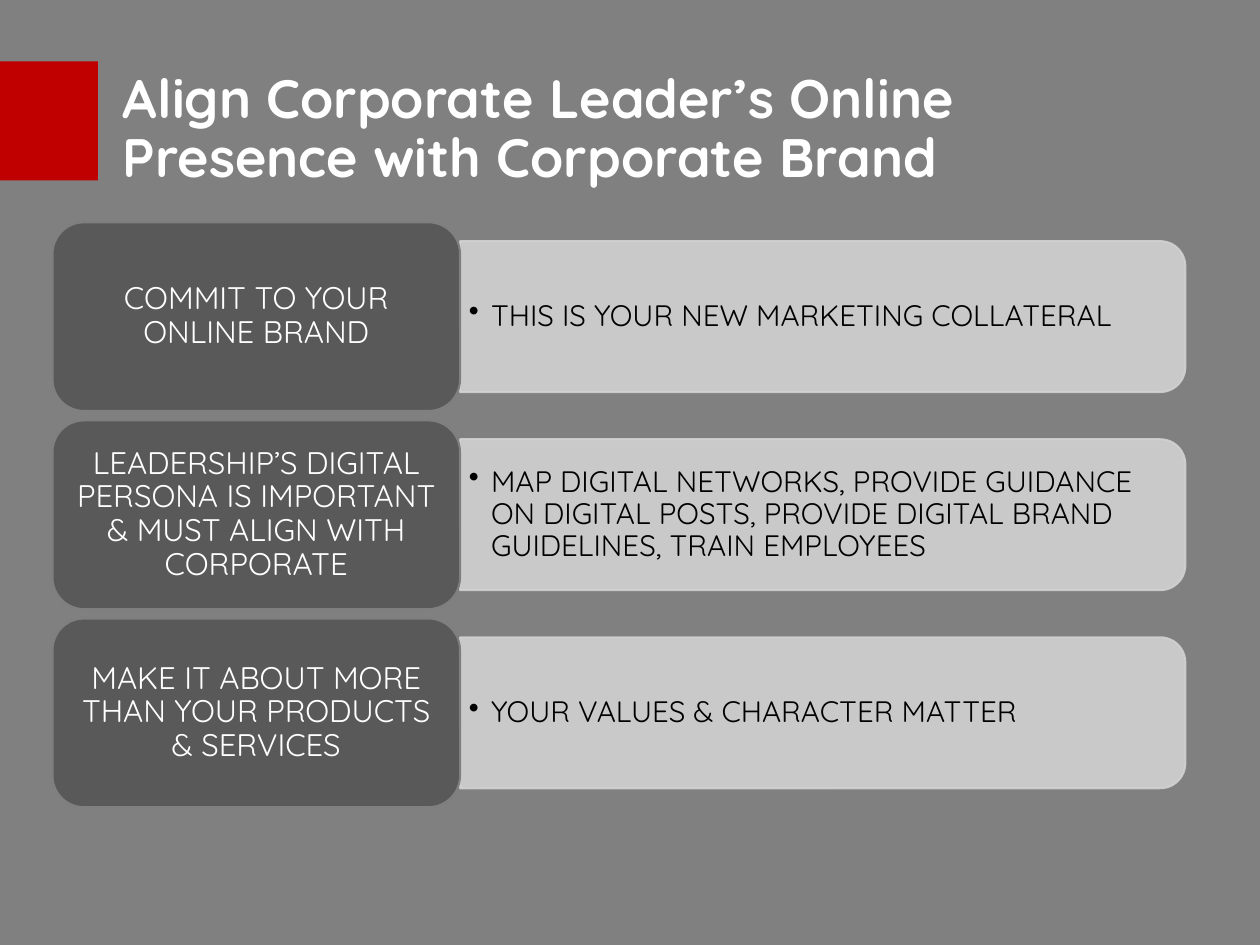
from lxml.etree import SubElement
from pptx import Presentation
from pptx.dml.color import RGBColor
from pptx.enum.shapes import MSO_SHAPE
from pptx.enum.text import MSO_ANCHOR, MSO_AUTO_SIZE, PP_ALIGN
from pptx.oxml.ns import qn
from pptx.util import Pt

COLORS = {
    "background": "808080",
    "accent": "C00000",
    "label": "595959",
    "label_line": "7F7F7F",
    "panel": "D1D1D1",
    "light_text": "FFFFFF",
    "dark_text": "000000",
}
FONT = "Quicksand"
TITLE = "Align Corporate Leader’s Online Presence with Corporate Brand"
ROWS = [
    ("COMMIT TO YOUR ONLINE BRAND",
     "THIS IS YOUR NEW MARKETING COLLATERAL"),
    ("LEADERSHIP’S DIGITAL PERSONA IS IMPORTANT & MUST ALIGN WITH CORPORATE",
     "MAP DIGITAL NETWORKS, PROVIDE GUIDANCE ON DIGITAL POSTS, "
     "PROVIDE DIGITAL BRAND GUIDELINES, TRAIN EMPLOYEES"),
    ("MAKE IT ABOUT MORE THAN YOUR PRODUCTS & SERVICES",
     "YOUR VALUES & CHARACTER MATTER"),
]


def color(name):
    return RGBColor.from_string(COLORS[name])


def add_block(page, kind, left, top, width, height, fill, line=None):
    block = page.shapes.add_shape(kind, Pt(left), Pt(top), Pt(width), Pt(height))
    block.shadow.inherit = False
    block.fill.solid()
    block.fill.fore_color.rgb = color(fill)
    if line:
        block.line.color.rgb = color(line)
        block.line.width = Pt(1.25)
    else:
        block.line.fill.background()
    return block


def write(box, text, size, ink, align, anchor, margins, bold=False):
    frame = box.text_frame
    frame.word_wrap = True
    frame.auto_size = MSO_AUTO_SIZE.NONE
    frame.vertical_anchor = anchor
    frame.margin_left = frame.margin_right = Pt(margins[0])
    frame.margin_top = frame.margin_bottom = Pt(margins[1])
    para = frame.paragraphs[0]
    para.alignment = align
    para.line_spacing = 0.9
    span = para.add_run()
    span.text = text
    span.font.name = FONT
    span.font.size = Pt(size)
    span.font.bold = bold
    span.font.color.rgb = color(ink)
    return para


def make_translucent(panel, percent):
    for node in panel.element.spPr.iter(qn("a:srgbClr")):
        SubElement(node, qn("a:alpha"), val=str(percent * 1000))


def add_bullet(para, indent):
    properties = para._p.get_or_add_pPr()
    properties.set("marL", str(Pt(indent)))
    properties.set("indent", str(-Pt(indent)))
    SubElement(properties, qn("a:buChar"), char="•")


def add_header(page, left, top, width, height):
    # Red tab at the slide edge
    add_block(page, MSO_SHAPE.RECTANGLE, 0, top, 59.6, 72.6, "accent")
    # Title
    title = page.shapes.title
    title.left, title.top = Pt(left), Pt(top)
    title.width, title.height = Pt(width), Pt(height)
    write(title, TITLE, 33, "light_text", PP_ALIGN.LEFT,
          MSO_ANCHOR.BOTTOM, (7.2, 3.6), bold=True)


def add_row(page, left, top, width, height, label_text, detail_text):
    label_width = 248.4
    panel_left = left + label_width
    panel_width = width - label_width
    panel_height = height * 0.8
    middle = top + height / 2

    # Detail panel: turned a quarter so its rounded corners face right
    panel = add_block(page, MSO_SHAPE.ROUND_2_SAME_RECTANGLE,
                      panel_left + (panel_width - panel_height) / 2,
                      middle - panel_width / 2,
                      panel_height, panel_width, "panel", "panel")
    panel.rotation = 90
    make_translucent(panel, 90)

    # Detail text
    text_height = panel_height - 9
    detail = page.shapes.add_textbox(Pt(panel_left), Pt(middle - text_height / 2),
                                     Pt(panel_width - 4.5), Pt(text_height))
    para = write(detail, detail_text, 18, "dark_text", PP_ALIGN.LEFT,
                 MSO_ANCHOR.MIDDLE, (5.4, 2.7))
    add_bullet(para, 13.5)

    # Label
    label = add_block(page, MSO_SHAPE.ROUNDED_RECTANGLE, left, top,
                      label_width, height, "label", "label_line")
    write(label, label_text, 19, "light_text", PP_ALIGN.CENTER,
          MSO_ANCHOR.MIDDLE, (5.7, 2.85))


def add_rows(page, left, top, width, height):
    gap_share = 0.05
    row_height = height / (len(ROWS) + gap_share * (len(ROWS) - 1))
    pitch = row_height * (1 + gap_share)
    for index, (label_text, detail_text) in enumerate(ROWS):
        add_row(page, left, top + index * pitch, width, row_height,
                label_text, detail_text)


def main():
    deck = Presentation()
    deck.slide_width, deck.slide_height = Pt(768), Pt(576)
    page = deck.slides.add_slide(deck.slide_layouts[5])
    page.background.fill.solid()
    page.background.fill.fore_color.rgb = color("background")
    add_header(page, 67.7, 37.4, 632, 81.4)
    add_rows(page, 32, 135.5, 690.5, 356.5)
    deck.save("out.pptx")


if __name__ == "__main__":
    main()
